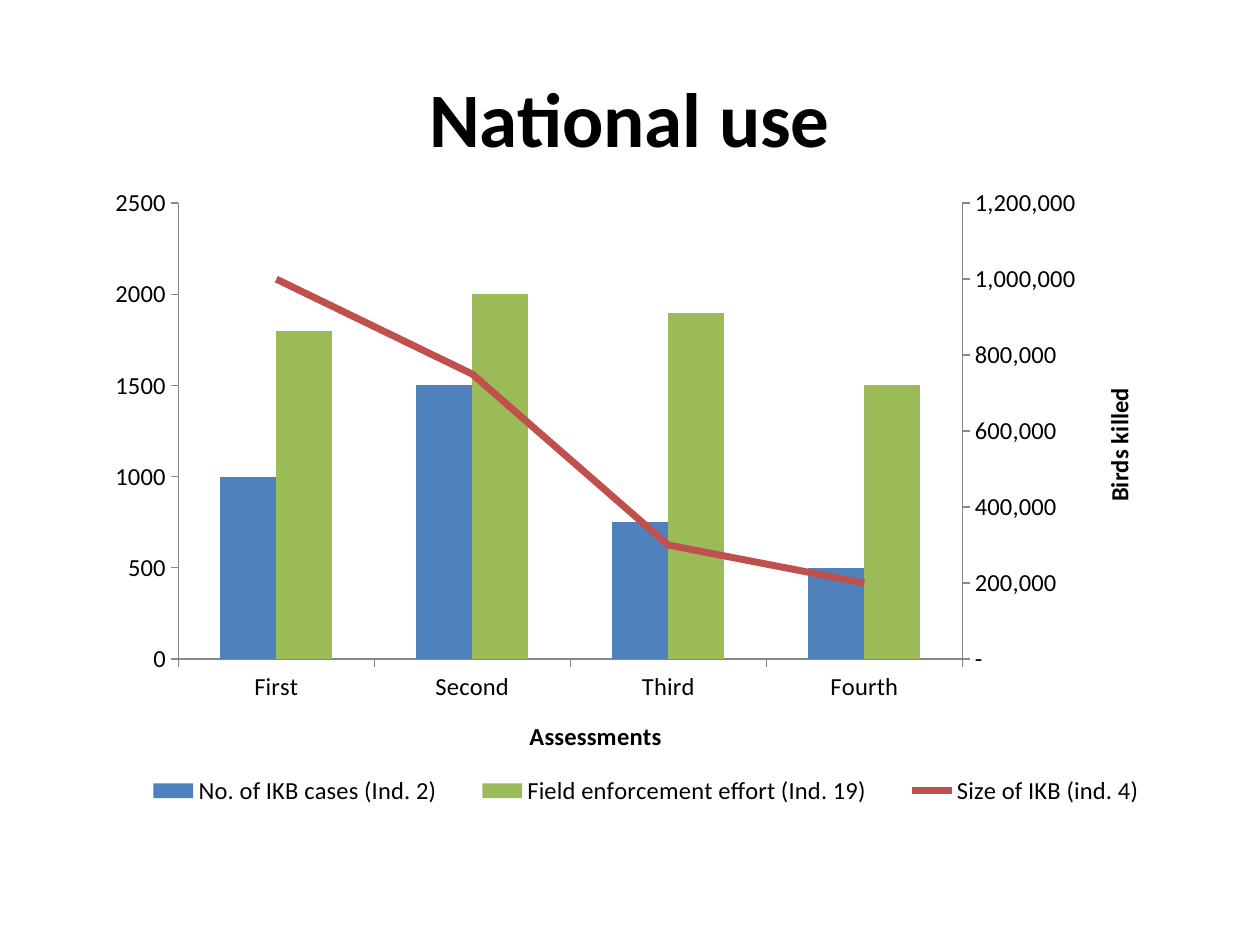
from copy import deepcopy

from pptx import Presentation
from pptx import util as u
from pptx.chart import axis as axes
from pptx.chart import data
from pptx.dml import color
from pptx.enum import chart as kinds
from pptx.enum import text
from pptx.oxml import parse_xml
from pptx.oxml.ns import nsdecls

COLOURS = {
    "text": "000000",
    "axis": "878787",
    "cases": "4F81BD",
    "effort": "9BBB59",
    "size": "C0504D",
}
FONT = "Calibri"
CATEGORIES = ["First", "Second", "Third", "Fourth"]
SERIES = [
    ("No. of IKB cases (Ind. 2)", [1000, 1500, 750, 500]),
    ("Field enforcement effort (Ind. 19)", [1800, 2000, 1900, 1500]),
    ("Size of IKB (ind. 4)", [1000000, 750000, 300000, 200000]),
]
# Percentages of the chart's width and height
PLOT_LAYOUT = {"x": 7.75, "y": 4.3, "w": 72.5, "h": 69.6}
LEGEND_LAYOUT = {"x": 2, "y": 90, "w": 98, "h": 8}


def rgb(name):
    return color.RGBColor.from_string(COLOURS[name])


def apply(target, values):
    for name, value in values.items():
        setattr(target, name, value)


def style_font(font, size, bold=False):
    apply(font, {"name": FONT, "size": u.Pt(size), "bold": bold})
    font.color.rgb = rgb("text")


def style_line(line, name, width):
    line.color.rgb = rgb(name)
    line.width = u.Pt(width)


def add_title(page, wording):
    box = page.shapes.add_textbox(u.Pt(36), u.Pt(21.6), u.Pt(648), u.Pt(90))
    frame = box.text_frame
    apply(frame, {"word_wrap": True, "vertical_anchor": text.MSO_ANCHOR.MIDDLE})
    para = frame.paragraphs[0]
    para.alignment = text.PP_ALIGN.CENTER
    span = para.add_run()
    span.text = wording
    style_font(span.font, 44, bold=True)


def style_axis(axis):
    apply(axis, {
        "has_major_gridlines": False,
        "major_tick_mark": kinds.XL_TICK_MARK.OUTSIDE,
        "minor_tick_mark": kinds.XL_TICK_MARK.NONE,
    })
    style_line(axis.format.line, "axis", 0.75)
    style_font(axis.tick_labels.font, 14)


def scale_axis(axis, maximum, step, number_format):
    apply(axis, {"minimum_scale": 0, "maximum_scale": maximum, "major_unit": step})
    apply(axis.tick_labels, {"number_format": number_format,
                             "number_format_is_linked": False})


def title_axis(axis, wording):
    para = axis.axis_title.text_frame.paragraphs[0]
    span = para.add_run()
    span.text = wording
    style_font(span.font, 14, bold=True)


def set_values(element, values):
    """Set the val attribute of the named children."""
    for name, value in values.items():
        element.xpath(f"c:{name}")[0].set("val", value)


def move_to_line(plot_area):
    """Turn the last column series into a line on a second pair of axes."""
    columns = plot_area.xpath("c:barChart")[0]
    series = columns.xpath("c:ser")[-1]
    for flag in series.xpath("c:invertIfNegative"):
        series.remove(flag)
    line_plot = parse_xml(
        f'<c:lineChart {nsdecls("c")}><c:grouping val="standard"/>'
        '<c:varyColors val="0"/><c:marker val="1"/>'
        '<c:axId val="3001"/><c:axId val="3002"/></c:lineChart>')
    line_plot.insert(2, series)
    columns.addnext(line_plot)

    value_axis = plot_area.xpath("c:valAx")[0]
    hidden = deepcopy(plot_area.xpath("c:catAx")[0])
    right = deepcopy(value_axis)
    set_values(hidden, {"axId": "3001", "crossAx": "3002", "delete": "1"})
    set_values(right, {"axId": "3002", "crossAx": "3001", "axPos": "r",
                       "crosses": "max"})
    value_axis.addnext(right)
    right.addnext(hidden)
    return axes.ValueAxis(right)


def place(element, index, layout, target=""):
    """Fix the place of a chart part, with its layout as child number index."""
    for old in element.xpath("c:layout"):
        element.remove(old)
    edges = "".join(f'<c:{key} val="{value / 100:.4f}"/>'
                    for key, value in layout.items())
    element.insert(index, parse_xml(
        f'<c:layout {nsdecls("c")}><c:manualLayout>{target}'
        f'<c:xMode val="edge"/><c:yMode val="edge"/>{edges}'
        '</c:manualLayout></c:layout>'))


def add_combined_chart(page):
    chart_data = data.CategoryChartData(number_format="General")
    chart_data.categories = CATEGORIES
    for name, values in SERIES:
        chart_data.add_series(name, values)
    chart = page.shapes.add_chart(
        kinds.XL_CHART_TYPE.COLUMN_CLUSTERED,
        u.Pt(54), u.Pt(100), u.Pt(618), u.Pt(374.4), chart_data).chart
    apply(chart, {"has_title": False, "has_legend": True})
    style_font(chart.font, 14)
    apply(chart.legend, {"position": kinds.XL_LEGEND_POSITION.BOTTOM,
                         "include_in_layout": False})
    style_font(chart.legend.font, 14)

    for axis in (chart.category_axis, chart.value_axis):
        style_axis(axis)
    scale_axis(chart.value_axis, 2500, 500, "General")
    plot_area = chart.element.xpath("c:chart/c:plotArea")[0]
    right_axis = move_to_line(plot_area)
    scale_axis(right_axis, 1200000, 200000, '#,##0;-#,##0;"-"')
    title_axis(chart.category_axis, "Assessments")
    title_axis(right_axis, "Birds killed")
    for body in plot_area.xpath("c:valAx/c:title//a:bodyPr"):
        body.set("rot", "-5400000")
        body.set("vert", "horz")
    place(plot_area, 0, PLOT_LAYOUT, '<c:layoutTarget val="inner"/>')
    place(chart.element.xpath("c:chart/c:legend")[0], 1, LEGEND_LAYOUT)

    columns, line_plot = chart.plots
    apply(columns, {"gap_width": 150, "overlap": 0, "vary_by_categories": False})
    for series, name in zip(columns.series, ("cases", "effort")):
        series.format.fill.solid()
        series.format.fill.fore_color.rgb = rgb(name)
    size = line_plot.series[0]
    size.smooth = False
    size.marker.style = kinds.XL_MARKER_STYLE.NONE
    style_line(size.format.line, "size", 4)


def main():
    deck = Presentation()
    apply(deck, {"slide_width": u.Pt(720), "slide_height": u.Pt(540)})
    page = deck.slides.add_slide(deck.slide_layouts[6])
    add_title(page, "National use")
    add_combined_chart(page)
    deck.save("out.pptx")


if __name__ == "__main__":
    main()
